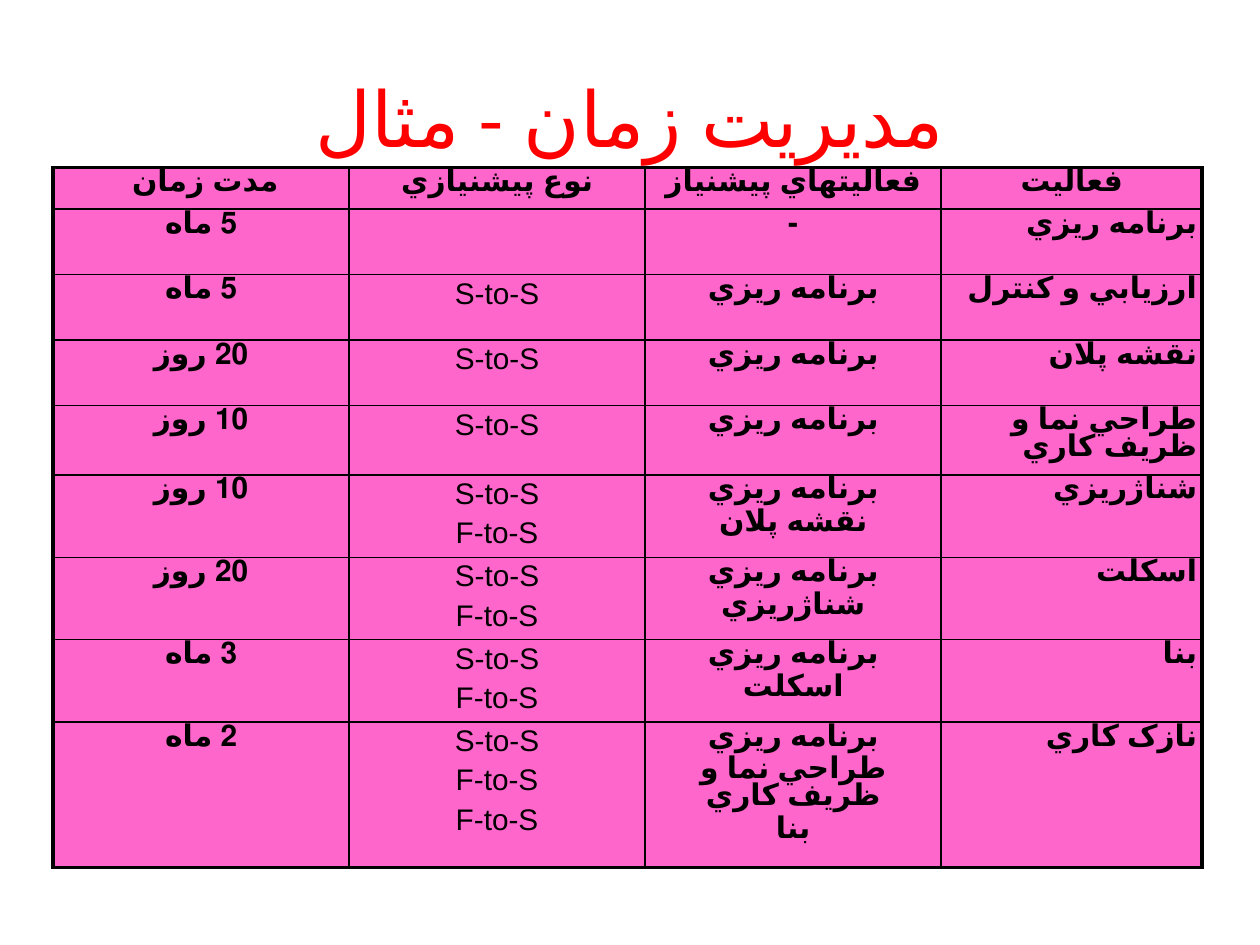
"""Build the time management example slide with its activity table."""
import dataclasses

import lxml.etree
import pptx
import pptx.dml.color
import pptx.enum.lang
import pptx.enum.text
import pptx.oxml.ns
import pptx.slide
import pptx.table
import pptx.text.text
import pptx.util

Inches = pptx.util.Inches
Pt = pptx.util.Pt
ALIGN = pptx.enum.text.PP_ALIGN
qn = pptx.oxml.ns.qn


@dataclasses.dataclass(frozen=True)
class Theme:
    font: str = "Arial"
    language: str = "fa-IR"
    title_color: str = "FF0000"
    text_color: str = "000000"
    border_color: str = "000000"
    cell_color: str = "FF66CC"
    title_size: float = 44
    cell_size: float = 17
    paragraph_gap_percent: int = 20
    inner_border: float = 1
    outer_border: float = 2.25


@dataclasses.dataclass(frozen=True)
class Activity:
    name: str
    predecessors: tuple[str, ...]
    links: tuple[str, ...]
    duration: str
    height: float


THEME = Theme()
START, FINISH = "S-to-S", "F-to-S"
PLANNING = "برنامه ريزي"
FLOOR_PLAN = "نقشه پلان"
FACADE = "طراحي نما و ظريف کاري"
TIE_BEAMS = "شناژريزي"
FRAME = "اسکلت"
MASONRY = "بنا"
COLUMN_WIDTHS = (2.35, 2.35, 2.35, 2.07)
HEADER = Activity("فعاليت", ("فعاليتهاي پيشنياز",), ("نوع پيشنيازي",), "مدت زمان ", 0.33)
ACTIVITIES = (
    Activity(PLANNING, ("-",), (), "5 ماه", 0.52),
    Activity("ارزيابي و کنترل", (PLANNING,), (START,), "5 ماه", 0.52),
    Activity(FLOOR_PLAN, (PLANNING,), (START,), "20 روز", 0.52),
    Activity(FACADE, (PLANNING,), (START,), "10 روز", 0.52),
    Activity(TIE_BEAMS, (PLANNING, FLOOR_PLAN), (START, FINISH), "10 روز", 0.59),
    Activity(FRAME, (PLANNING, TIE_BEAMS), (START, FINISH), "20 روز", 0.59),
    Activity(MASONRY, (PLANNING, FRAME), (START, FINISH), "3 ماه", 0.59),
    Activity("نازک کاري", (PLANNING, FACADE, MASONRY), (START, FINISH, FINISH), "2 ماه", 0.59),
)


def write_text(frame: pptx.text.text.TextFrame, lines: tuple[str, ...], *, size: float,
               color: str, bold: bool = False, align: ALIGN = ALIGN.CENTER,
               gap_percent: int = 0, spacing: float = 1.0) -> None:
    """Write right-to-left paragraphs in one format."""
    frame.word_wrap = True
    for index, line in enumerate(lines):
        paragraph = frame.add_paragraph() if index else frame.paragraphs[0]
        paragraph.alignment = align
        paragraph.line_spacing = spacing
        properties = paragraph._p.get_or_add_pPr()
        properties.set("rtl", "1")
        gap = properties.get_or_add_spcBef()
        lxml.etree.SubElement(gap, qn("a:spcPct"), val=str(gap_percent * 1000))
        run = paragraph.add_run()
        run.text = line
        run.font.name = THEME.font
        run.font.size = Pt(size)
        run.font.bold = bold
        run.font.color.rgb = pptx.dml.color.RGBColor.from_string(color)
        run.font._element.set("lang", THEME.language)


def style_cell(cell: pptx.table._Cell, outer_sides: dict[str, bool]) -> None:
    """Set the margins, borders and fill of a cell."""
    cell.margin_left = cell.margin_right = Inches(0.04)
    cell.margin_top = cell.margin_bottom = Inches(0.02)
    properties = cell._tc.get_or_add_tcPr()
    for side, is_outer in outer_sides.items():
        width = THEME.outer_border if is_outer else THEME.inner_border
        border = lxml.etree.SubElement(properties, qn(f"a:ln{side}"), w=str(Pt(width)))
        border_fill = lxml.etree.SubElement(border, qn("a:solidFill"))
        lxml.etree.SubElement(border_fill, qn("a:srgbClr"), val=THEME.border_color)
    cell.fill.solid()
    cell.fill.fore_color.rgb = pptx.dml.color.RGBColor.from_string(THEME.cell_color)


def draw_activities(slide: pptx.slide.Slide) -> None:
    """Draw the header and all activities as a table."""
    entries = (HEADER, *ACTIVITIES)
    last_row, last_column = len(entries) - 1, len(COLUMN_WIDTHS) - 1
    table = slide.shapes.add_table(
        len(entries), len(COLUMN_WIDTHS), Inches(0.42), Inches(1.33),
        Inches(sum(COLUMN_WIDTHS)), Inches(sum(entry.height for entry in entries))).table
    for column, width in zip(table.columns, COLUMN_WIDTHS):
        column.width = Inches(width)
    for row, entry in enumerate(entries):
        table.rows[row].height = Inches(entry.height)
        contents = ((entry.duration,), entry.links, entry.predecessors, (entry.name,))
        for column, lines in enumerate(contents):
            cell = table.cell(row, column)
            style_cell(cell, {"L": column == 0, "R": column == last_column,
                              "T": row == 0, "B": row == last_row})
            is_link = row > 0 and column == 1
            is_name = row > 0 and column == last_column
            write_text(cell.text_frame, lines, size=THEME.cell_size, color=THEME.text_color,
                       bold=not is_link, align=ALIGN.RIGHT if is_name else ALIGN.CENTER,
                       gap_percent=THEME.paragraph_gap_percent,
                       spacing=1.0 if is_link else 0.9)


def main() -> None:
    """Build and save the slide."""
    presentation = pptx.Presentation()
    presentation.slide_width, presentation.slide_height = Inches(10), Inches(7.5)
    slide = presentation.slides.add_slide(presentation.slide_layouts[6])
    title = slide.shapes.add_textbox(Inches(0.5), Inches(0.3), Inches(9), Inches(1.25))
    title.text_frame.vertical_anchor = pptx.enum.text.MSO_ANCHOR.MIDDLE
    write_text(title.text_frame, ("مديريت زمان - مثال",),
               size=THEME.title_size, color=THEME.title_color)
    draw_activities(slide)
    presentation.save("out.pptx")


if __name__ == "__main__":
    main()
